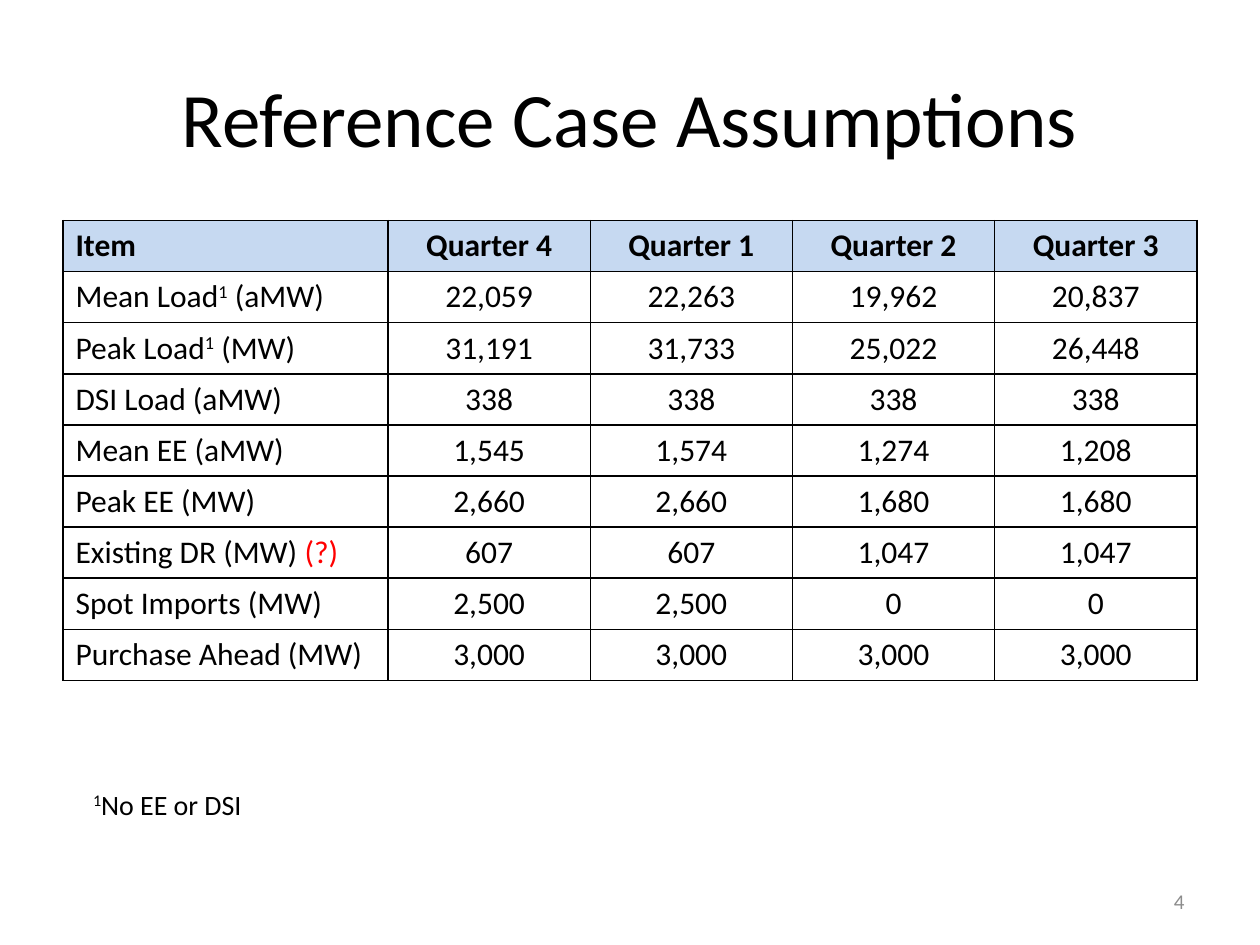
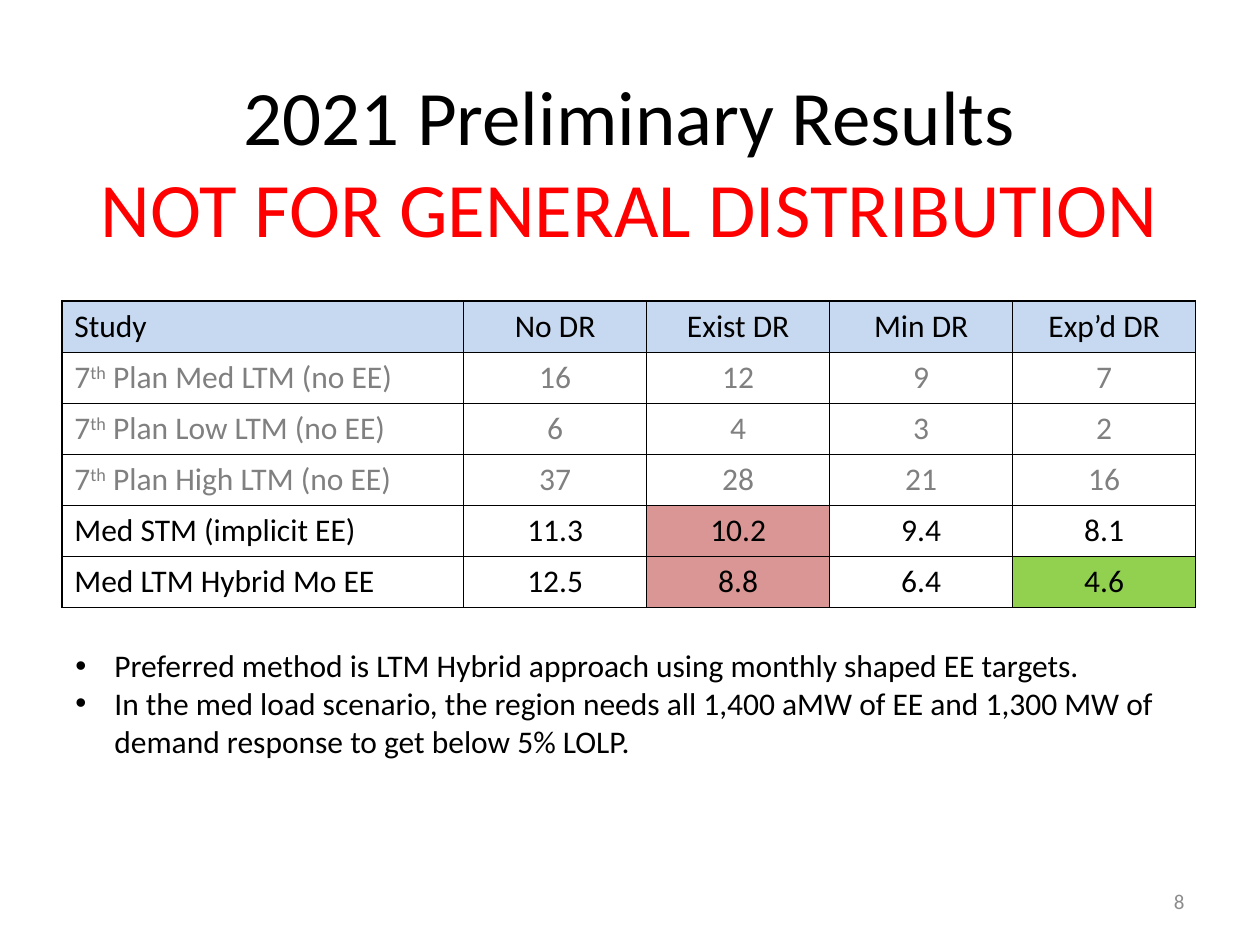
from lxml.etree import SubElement
from pptx import Presentation
from pptx.dml.color import RGBColor
from pptx.enum.text import MSO_ANCHOR, PP_ALIGN
from pptx.oxml import parse_xml
from pptx.oxml.ns import nsdecls, qn
from pptx.util import Inches, Pt

FONT = "Calibri"
BLACK, RED, GRAY = "000000", "FF0000", "808080"
NUMBER_GRAY, HEADER_BLUE = "8C8C8C", "C6D9F1"
ROSE, GREEN = "D99694", "92D050"
ROW_HEIGHT = 3.65 / 9
TABLE_WIDTH = 9


def write(para, text, size, color=BLACK, align=PP_ALIGN.LEFT, bold=False):
    """Fill a paragraph; text between ^ marks is superscript, between ~ marks red."""
    para.alignment = align
    para.font.name, para.font.size, para.font.bold = FONT, Pt(size), bold
    para.font.color.rgb = RGBColor.from_string(color)
    for red_index, part in enumerate(text.split("~")):
        for raised_index, piece in enumerate(part.split("^")):
            for line_index, line in enumerate(piece.split("\n")):
                if line_index:
                    para.add_line_break()
                if not line:
                    continue
                span = para.add_run()
                span.text = line
                if red_index % 2:
                    span.font.color.rgb = RGBColor.from_string(RED)
                if raised_index % 2:
                    span.font._element.set("baseline", "30000")


def add_box(page, left, top, width, height, anchor=MSO_ANCHOR.TOP):
    box = page.shapes.add_textbox(Inches(left), Inches(top), Inches(width), Inches(height))
    box.text_frame.word_wrap = True
    box.text_frame.vertical_anchor = anchor
    return box.text_frame


assumptions = [
    ["Item", "Quarter 4", "Quarter 1", "Quarter 2", "Quarter 3"],
    ["Mean Load^1^ (aMW)", "22,059", "22,263", "19,962", "20,837"],
    ["Peak Load^1^ (MW)", "31,191", "31,733", "25,022", "26,448"],
    ["DSI Load (aMW)", "338", "338", "338", "338"],
    ["Mean EE (aMW)", "1,545", "1,574", "1,274", "1,208"],
    ["Peak EE (MW)", "2,660", "2,660", "1,680", "1,680"],
    ["Existing DR (MW) ~(?)~", "607", "607", "1,047", "1,047"],
    ["Spot Imports (MW)", "2,500", "2,500", "0", "0"],
    ["Purchase Ahead (MW)", "3,000", "3,000", "3,000", "3,000"],
]
results = [
    ["Study", "No DR", "Exist DR", "Min DR", "Exp’d DR"],
    ["7^th^ Plan Med LTM (no EE)", "16", "12", "9", "7"],
    ["7^th^ Plan Low LTM (no EE)", "6", "4", "3", "2"],
    ["7^th^ Plan High LTM (no EE)", "37", "28", "21", "16"],
    ["Med STM (implicit EE)", "11.3", "10.2", "9.4", "8.1"],
    ["Med LTM Hybrid Mo EE", "12.5", "8.8", "6.4", "4.6"],
]
slides = [
    dict(title="Reference Case Assumptions", title_height=1.25, number="4",
         rows=assumptions, left=0.5, top=1.75, label_width=2.58,
         bold_header=True, gray_rows=[], highlights={}),
    dict(title="2021 Preliminary Results\n~NOT FOR GENERAL DISTRIBUTION~",
         title_height=1.95, number="8",
         rows=results, left=0.49, top=2.39, label_width=3.19,
         bold_header=False, gray_rows=[1, 2, 3],
         highlights={(4, 2): ROSE, (5, 2): ROSE, (5, 4): GREEN}),
]

deck = Presentation()
deck.slide_width, deck.slide_height = Inches(10), Inches(7.5)
pages = []

for content in slides:
    page = deck.slides.add_slide(deck.slide_layouts[6])
    pages.append(page)
    title = add_box(page, 0.5, 0.3, 9, content["title_height"], MSO_ANCHOR.MIDDLE)
    write(title.paragraphs[0], content["title"], 44, align=PP_ALIGN.CENTER)

    rows = content["rows"]
    column_count = len(rows[0])
    table = page.shapes.add_table(
        len(rows), column_count, Inches(content["left"]), Inches(content["top"]),
        Inches(TABLE_WIDTH), Inches(ROW_HEIGHT * len(rows))).table
    table.first_row = table.horz_banding = False
    value_width = (TABLE_WIDTH - content["label_width"]) / (column_count - 1)
    for column_index, column in enumerate(table.columns):
        column.width = Inches(value_width if column_index else content["label_width"])

    for row_index, row in enumerate(rows):
        for column_index, text in enumerate(row):
            cell = table.cell(row_index, column_index)
            write(cell.text_frame.paragraphs[0], text, 18,
                  color=GRAY if row_index in content["gray_rows"] else BLACK,
                  align=PP_ALIGN.CENTER if column_index else PP_ALIGN.LEFT,
                  bold=content["bold_header"] and row_index == 0)
            properties = cell._tc.get_or_add_tcPr()
            for side in ("lnL", "lnR", "lnT", "lnB"):
                properties.append(parse_xml(
                    f'<a:{side} {nsdecls("a")} w="12700"><a:solidFill>'
                    f'<a:srgbClr val="{BLACK}"/></a:solidFill></a:{side}>'))
            fill = content["highlights"].get((row_index, column_index))
            if row_index == 0:
                fill = HEADER_BLUE
            if fill:
                cell.fill.solid()
                cell.fill.fore_color.rgb = RGBColor.from_string(fill)
            else:
                cell.fill.background()

    number = add_box(page, 7.17, 6.95, 2.33, 0.4, MSO_ANCHOR.MIDDLE)
    write(number.paragraphs[0], content["number"], 12, NUMBER_GRAY, PP_ALIGN.RIGHT)

assumptions_page, results_page = pages
footnote = add_box(assumptions_page, 0.64, 6.2, 7.67, 0.37)
write(footnote.paragraphs[0], "^1^No EE or DSI", 16)

findings = [
    "Preferred method is LTM Hybrid approach using monthly shaped EE targets.",
    "In the med load scenario, the region needs all 1,400 aMW of EE and 1,300 MW of "
    "demand response to get below 5% LOLP.",
]
findings_frame = add_box(results_page, 0.5, 5.08, 8.99, 1.01)
for finding_index, finding in enumerate(findings):
    para = findings_frame.add_paragraph() if finding_index else findings_frame.paragraphs[0]
    properties = para._p.get_or_add_pPr()
    properties.set("marL", str(Inches(0.31)))
    properties.set("indent", str(-Inches(0.31)))
    SubElement(properties, qn("a:buFont"), typeface="Arial")
    SubElement(properties, qn("a:buChar"), char="•")
    write(para, finding, 18)

deck.save("out.pptx")
